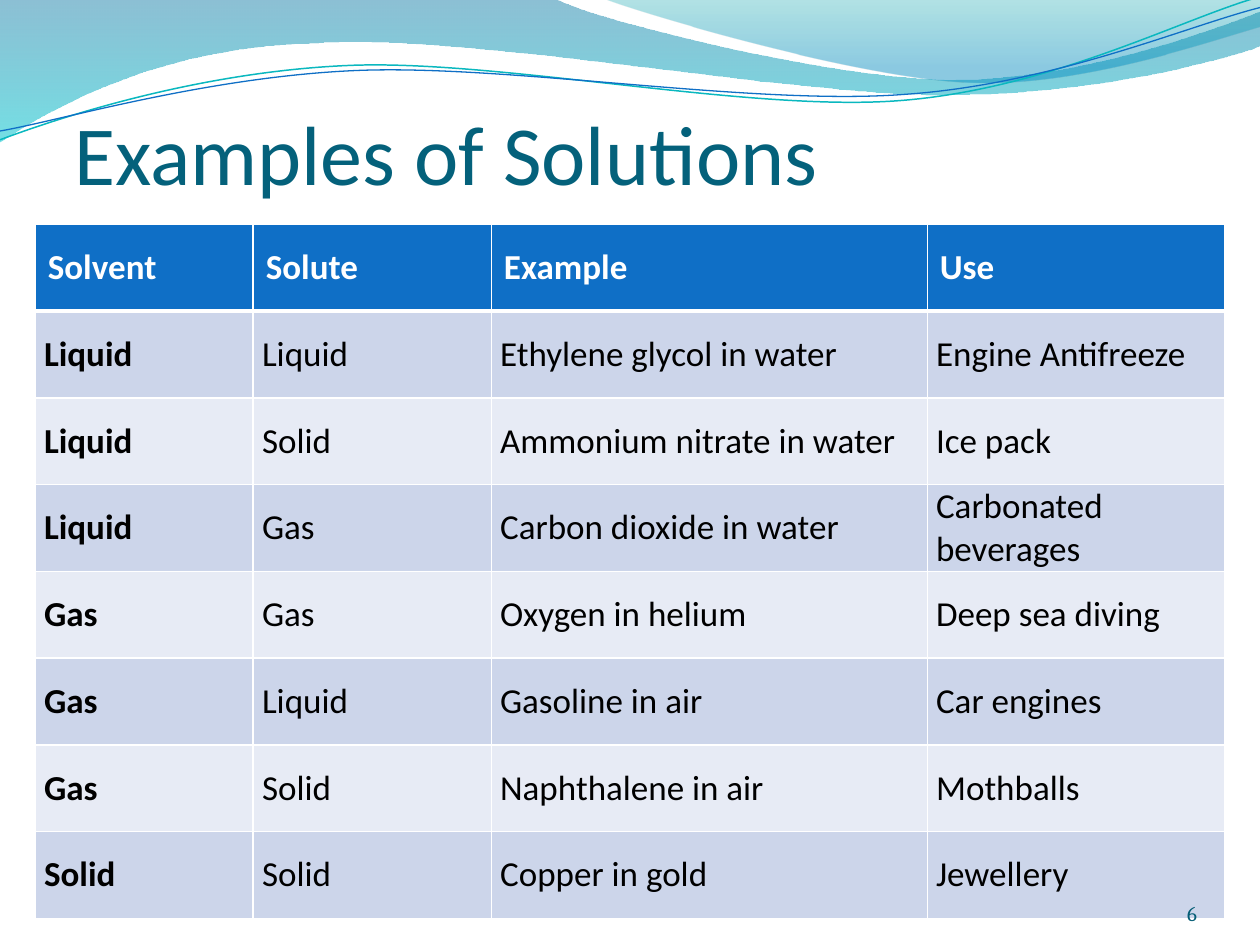
"""Build the slide "Examples of Solutions" with its wave banner and table."""
from dataclasses import dataclass
from typing import Optional

from lxml.etree import SubElement
from pptx import Presentation
from pptx.dml.color import RGBColor
from pptx.enum.text import MSO_ANCHOR as Anchor, MSO_AUTO_SIZE as AutoSize, PP_ALIGN as Align
from pptx.oxml.ns import qn
from pptx.util import Emu, Inches, Pt

COLUMNS, ROWS = 10, 7.5
CELL = Inches(1)
BLUE, WHITE, BLACK, TEAL = "0F6FC6", "FFFFFF", "000000", "04617B"
BANDS = ("CCD5EA", "E7EBF5")

TABLE_BOX = (0.28, 1.78, 9.45, 5.51)
COLUMN_WIDTHS = (1.73, 1.89, 3.46, 2.36)
TABLE_ROWS = (
    ("Solvent", "Solute", "Example", "Use"),
    ("Liquid", "Liquid", "Ethylene glycol in water", "Engine Antifreeze"),
    ("Liquid", "Solid", "Ammonium nitrate in water", "Ice pack"),
    ("Liquid", "Gas", "Carbon dioxide in water", "Carbonated beverages"),
    ("Gas", "Gas", "Oxygen in helium", "Deep sea diving"),
    ("Gas", "Liquid", "Gasoline in air", "Car engines"),
    ("Gas", "Solid", "Naphthalene in air", "Mothballs"),
    ("Solid", "Solid", "Copper in gold", "Jewellery"),
)


@dataclass(frozen=True)
class Stop:
    position: float
    color: str
    opacity: int


@dataclass(frozen=True)
class Wave:
    """Segments hold one point for a straight line, three for a curve."""
    start: tuple
    segments: tuple
    stops: tuple = ()
    line: Optional[str] = None
    weight: float = 0


WAVES = (
    Wave((0, 0), (
        ((4.4, -0.01),),
        ((4.76, 0.17), (6.64, 0.63), (7.58, 0.63)),
        ((8.53, 0.63), (9.58, 0.26), (10, 0.09)),
        ((10.01, 0.36),),
        ((9.83, 0.44), (8.7, 0.76), (7.46, 0.75)),
        ((6.22, 0.75), (3.82, 0.28), (2.57, 0.34)),
        ((1.29, 0.36), (0.46, 0.83), (-0.01, 1.13)),
    ), stops=(Stop(0, "0074A1", 45), Stop(1, "00C6CF", 55))),
    Wave((4.79, -0.01), (
        ((5.09, 0.11), (6.82, 0.62), (7.69, 0.65)),
        ((8.56, 0.69), (9.61, 0.32), (10, 0.21)),
        ((10, 0),),
    ), stops=(Stop(0, "00A1A9", 30), Stop(0.8, "008BBF", 45))),
    Wave((0, 1.11), (
        ((0.48, 0.93), (1.58, 0.57), (2.77, 0.52)),
        ((3.95, 0.47), (5.93, 0.89), (7.13, 0.8)),
        ((8.33, 0.71), (9.38, 0.15), (9.98, -0.02)),
    ), line="0AB8BF", weight=0.85),
    Wave((0, 1.04), (
        ((0.47, 0.96), (1.64, 0.61), (2.83, 0.56)),
        ((4.03, 0.51), (5.97, 0.84), (7.17, 0.75)),
        ((8.36, 0.67), (9.41, 0.21), (10, 0.06)),
    ), line=BLUE, weight=0.75),
)


def grid(*lengths: float) -> list:
    """Turn grid columns or rows into slide lengths."""
    return [Emu(round(length * CELL)) for length in lengths]


def rgb(value: str) -> RGBColor:
    """Turn a hex string into a colour."""
    return RGBColor.from_string(value)


def write(frame, text: str, *, size: float, color: str, font: str = "Calibri",
          bold: bool = False, align=Align.LEFT) -> None:
    """Put one formatted paragraph into a text frame."""
    para = frame.paragraphs[0]
    para.alignment = align
    span = para.add_run()
    span.text = text
    span.font.name, span.font.size, span.font.bold = font, Pt(size), bold
    span.font.color.rgb = rgb(color)


def set_frame(frame, top_margin: float = 0) -> None:
    """Anchor a wrapped text frame at the bottom, with no side margins."""
    frame.word_wrap = True
    frame.auto_size = AutoSize.NONE
    frame.vertical_anchor = Anchor.BOTTOM
    frame.margin_left = frame.margin_right = frame.margin_bottom = 0
    frame.margin_top = grid(top_margin)[0]


def bend(shape, segments: tuple) -> None:
    """Turn the straight sides of a freeform into its cubic curves."""
    sides = list(shape.element.iter(qn("a:lnTo")))
    for side, segment in zip(sides, segments):
        if len(segment) == 1:
            continue
        side.tag = qn("a:cubicBezTo")
        side.clear()
        for point in segment:
            x, y = grid(*point)
            SubElement(side, qn("a:pt"), x=str(x - shape.left), y=str(y - shape.top))


def draw_wave(page, wave: Wave) -> None:
    """Draw a translucent gradient band or a thin curved line."""
    builder = page.shapes.build_freeform(*grid(*wave.start), scale=1)
    ends = [grid(*segment[-1]) for segment in wave.segments]
    builder.add_line_segments(ends, close=bool(wave.stops))
    shape = builder.convert_to_shape()
    bend(shape, wave.segments)
    shape.shadow.inherit = False
    if wave.line:
        shape.fill.background()
        shape.line.color.rgb = rgb(wave.line)
        shape.line.width = Pt(wave.weight)
        return
    shape.line.fill.background()
    shape.fill.gradient()
    shape.fill.gradient_angle = 270
    elements = shape.element.iter(qn("a:gs"))
    for stop, target, element in zip(wave.stops, shape.fill.gradient_stops, elements):
        target.position = stop.position
        target.color.rgb = rgb(stop.color)
        SubElement(element[0], qn("a:alpha"), val=str(stop.opacity * 1000))


def set_borders(cell, top: float, bottom: float) -> None:
    """Give a cell white borders, with its own top and bottom weights."""
    properties = cell._tc.get_or_add_tcPr()
    for side, weight in (("L", 1), ("R", 1), ("T", top), ("B", bottom)):
        line = SubElement(properties, qn(f"a:ln{side}"), w=str(Pt(weight)))
        fill = SubElement(line, qn("a:solidFill"))
        SubElement(fill, qn("a:srgbClr"), val=WHITE)


def draw_table(page) -> None:
    """Draw the banded table of solutions."""
    table = page.shapes.add_table(len(TABLE_ROWS), len(COLUMN_WIDTHS), *grid(*TABLE_BOX)).table
    for column, width in zip(table.columns, grid(*COLUMN_WIDTHS)):
        column.width = width
    for row, texts in enumerate(TABLE_ROWS):
        header = row == 0
        table.rows[row].height = grid(TABLE_BOX[3] / len(TABLE_ROWS))[0]
        for column, text in enumerate(texts):
            cell = table.cell(row, column)
            set_borders(cell, top=3 if row == 1 else 1, bottom=3 if header else 1)
            cell.fill.solid()
            cell.fill.fore_color.rgb = rgb(BLUE if header else BANDS[(row - 1) % 2])
            cell.vertical_anchor = Anchor.MIDDLE
            if not header:
                cell.margin_left = cell.margin_right = grid(0.07)[0]
                cell.margin_top = cell.margin_bottom = 0
            write(cell.text_frame, text, size=20, color=WHITE if header else BLACK,
                  bold=header or column == 0)


def draw_title(page) -> None:
    """Format the title placeholder and bring it in front of the waves."""
    title = page.shapes.title
    title.left, title.top, title.width, title.height = grid(0.59, 0.36, 9, 1.25)
    set_frame(title.text_frame, top_margin=0.05)
    write(title.text_frame, "Examples of Solutions", size=48, color=TEAL)
    title.element.getparent().append(title.element)


def draw_page_number(page) -> None:
    """Draw the page number at the bottom right."""
    box = page.shapes.add_textbox(*grid(8.67, 6.95, 0.83, 0.4))
    set_frame(box.text_frame)
    write(box.text_frame, "6", size=12, color="045D75", font="Cambria", align=Align.RIGHT)


def main() -> None:
    """Build and save the deck."""
    deck = Presentation()
    deck.slide_width, deck.slide_height = grid(COLUMNS, ROWS)
    page = deck.slides.add_slide(deck.slide_layouts[5])
    for wave in WAVES:
        draw_wave(page, wave)
    draw_title(page)
    draw_table(page)
    draw_page_number(page)
    deck.save("out.pptx")


if __name__ == "__main__":
    main()
